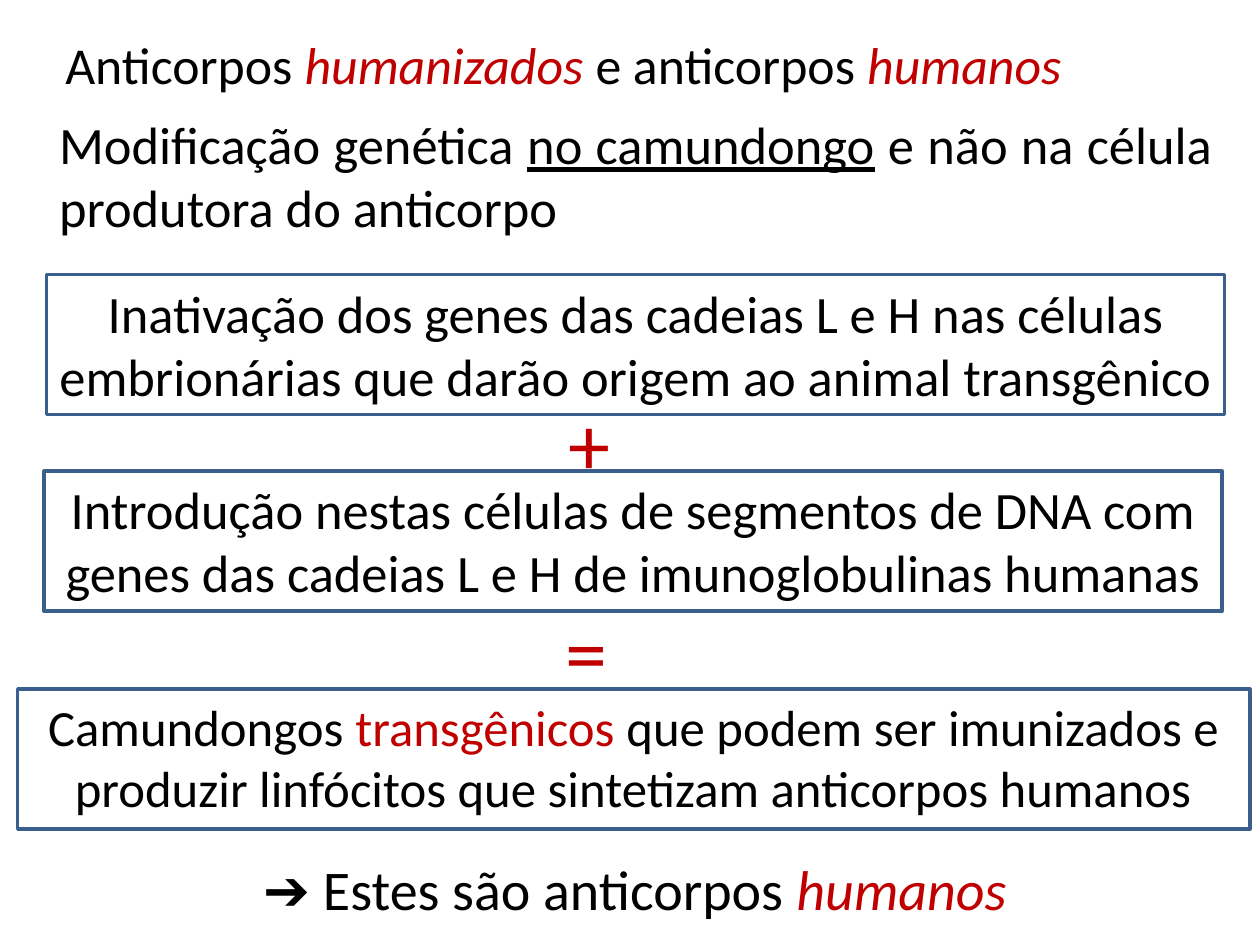
import pptx
import pptx.util
import pptx.dml.color
import pptx.enum.shapes
import pptx.enum.text
from dataclasses import dataclass

Inches = pptx.util.Inches
Pt = pptx.util.Pt
RGB = pptx.dml.color.RGBColor
ALIGN = pptx.enum.text.PP_ALIGN


@dataclass(frozen=True)
class Theme:
    """Colours, font and type sizes of the slide."""
    font: str = "Calibri"
    ink: str = "000000"
    accent: str = "C00000"
    border: str = "3A5F8C"
    title: float = 29.6
    body: float = 30
    result: float = 29
    closing: float = 32
    sign: float = 48


THEME = Theme()


def write(sp, runs, size, align=ALIGN.LEFT):
    """Fill a shape with one paragraph of (text, styles) runs."""
    tf = sp.text_frame
    tf.word_wrap = True
    tf.vertical_anchor = pptx.enum.text.MSO_ANCHOR.TOP
    p = tf.paragraphs[0]
    p.alignment = align
    for text, styles in runs:
        r = p.add_run()
        r.text = text
        r.font.name = THEME.font
        r.font.size = Pt(size)
        r.font.italic = "italic" in styles
        r.font.underline = "underline" in styles
        color = THEME.accent if "accent" in styles else THEME.ink
        r.font.color.rgb = RGB.from_string(color)


def add_text(s, box, runs, size, align=ALIGN.LEFT):
    """Place plain text in the given box."""
    sp = s.shapes.add_textbox(*map(Inches, box))
    write(sp, runs, size, align)


def add_step(s, box, runs, size):
    """Place a bordered step with centred text in the given box."""
    rect = pptx.enum.shapes.MSO_SHAPE.RECTANGLE
    sp = s.shapes.add_shape(rect, *map(Inches, box))
    sp.shadow.inherit = False
    sp.fill.background()
    sp.line.color.rgb = RGB.from_string(THEME.border)
    sp.line.width = Pt(2)
    write(sp, runs, size, ALIGN.CENTER)


def add_heading(s, box):
    """Place the title and the introduction in the given box."""
    left, top, width, height = box
    add_text(s, (left + 0.05, top, 9, 0.56), [
        ("Anticorpos ", ""), ("humanizados", "accent italic"),
        (" e anticorpos ", ""), ("humanos", "accent italic")], THEME.title)
    add_text(s, (left, top + 0.63, width, height - 0.63), [
        ("Modificação genética ", ""), ("no camundongo", "underline"),
        (" e não na célula produtora do anticorpo", "")],
        THEME.body, ALIGN.JUSTIFY)


def add_equation(s, box):
    """Place the two steps, their signs and the result in the given box."""
    left, top, width, height = box
    step_h = 1.11
    add_step(s, (left + 0.23, top, 9.35, step_h), [
        ("Inativação dos genes das cadeias L e H nas células embrionárias "
         "que darão origem ao animal transgênico", "")], THEME.body)
    add_step(s, (left + 0.21, top + 1.56, 9.35, step_h), [
        ("Introdução nestas células de segmentos de DNA com genes das "
         "cadeias L e H de imunoglobulinas humanas", "")], THEME.body)
    add_step(s, (left, top + height - step_h, width, step_h), [
        ("Camundongos ", ""), ("transgênicos", "accent"),
        (" que podem ser imunizados e produzir linfócitos que sintetizam "
         "anticorpos humanos", "")], THEME.result)
    for sign, dx, dy, align in (("+", 4.22, 0.88, ALIGN.CENTER),
                                ("=", 4.25, 2.53, ALIGN.LEFT)):
        add_text(s, (left + dx, top + dy, 0.63, 0.91),
                 [(sign, "accent")], THEME.sign, align)


def add_closing(s, box):
    """Place the closing statement in the given box."""
    add_text(s, box, [("➔ Estes são anticorpos ", ""),
                      ("humanos", "accent italic")],
             THEME.closing, ALIGN.CENTER)


def main():
    """Build and save the slide."""
    prs = pptx.Presentation()
    prs.slide_width, prs.slide_height = Inches(10), Inches(7.5)
    s = prs.slides.add_slide(prs.slide_layouts[6])
    add_heading(s, (0.37, 0.21, 9.35, 1.74))
    add_equation(s, (0.14, 2.18, 9.78, 4.4))
    add_closing(s, (0.37, 6.73, 9.34, 0.64))
    prs.save("out.pptx")


if __name__ == "__main__":
    main()
